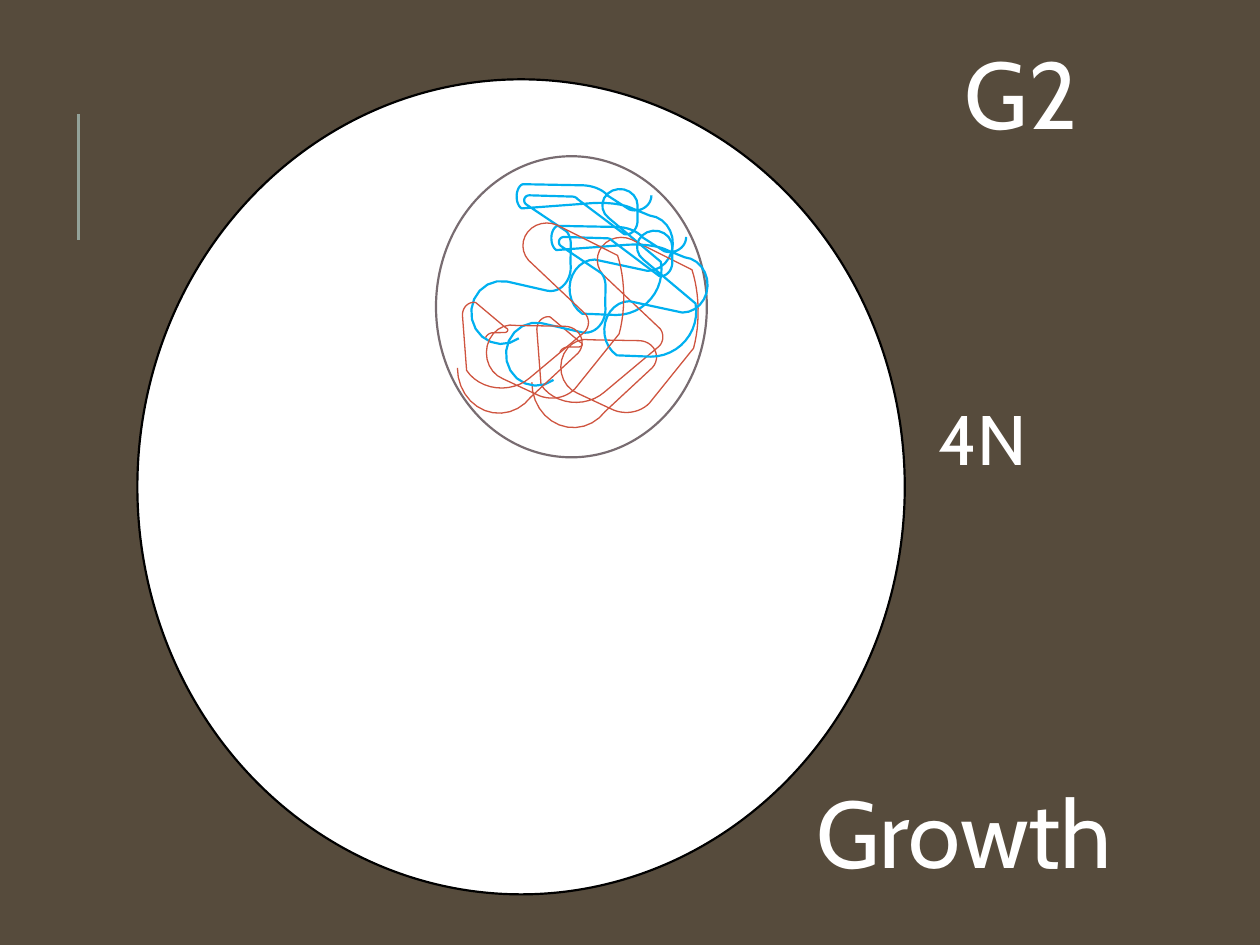
from collections import namedtuple
from math import cos, radians, sin

from lxml.etree import SubElement
from pptx import Presentation
from pptx.dml.color import RGBColor
from pptx.enum.shapes import MSO_CONNECTOR, MSO_SHAPE
from pptx.enum.text import MSO_AUTO_SIZE
from pptx.oxml.ns import qn
from pptx.util import Cm, Pt

BROWN = RGBColor(0x56, 0x4B, 0x3C)
SAGE = RGBColor(0x93, 0xA2, 0x99)
WHITE = RGBColor(0xFF, 0xFF, 0xFF)
BLACK = RGBColor(0x00, 0x00, 0x00)
MAUVE = RGBColor(0x78, 0x6C, 0x71)
BLUE = RGBColor(0x00, 0xB0, 0xF0)
RED = RGBColor(0xCF, 0x54, 0x3F)

STRAND_UNIT = Cm(2.54) / 100
ARC_STEPS = 12

Arc = namedtuple("Arc", "center_x center_y radius_x radius_y start end")

BLUE_BENDS = {
    "lower left lobe": Arc(52, 124, 24, 25, 55, 280),
    "dip": Arc(91, 88, 16, 19, 100, -10),
    "shoulder": Arc(100, 70, 7, 12, 0, -60),
    "inner cap": Arc(74, 35, 4, 4, 120, 270),
    "inner corner": Arc(108, 36, 5, 4, -90, -30),
    "ring entry": Arc(151, 51, 9, 11, 100, 0),
    "ring": Arc(146, 39, 14, 13, 0, -230),
    "right belly": Arc(143, 90, 36, 36, -10, 90),
    "middle lobe": Arc(126, 105, 20, 23, 120, 270),
    "right lobe": Arc(168, 69, 20, 22, 90, -85),
    "crest": Arc(130, 46, 30, 9, -30, -110),
    "outer cap": Arc(70, 32, 6, 10, 110, 260),
    "upper slope": Arc(115, 40, 25, 17, -85, -30),
    "end hook": Arc(158, 31, 13, 12, 110, 0),
}
RED_BENDS = {
    "bottom bowl": Arc(50, 168, 33, 36, 180, 40),
    "inner turn": Arc(102, 148, 14, 13, 40, -90),
    "left lobe": Arc(60, 156, 20, 22, -80, -250),
    "inner bowl": Arc(92, 171, 24, 21, 120, 40),
    "right side": Arc(122, 112, 27, 58, 30, -35),
    "top lobe": Arc(88, 71, 19, 18, -65, -220),
    "right corner": Arc(112, 132, 9, 10, -40, 50),
    "shallow bowl": Arc(52, 156, 32, 28, 45, 150),
    "left cap": Arc(30, 126, 9, 10, 180, 280),
    "tip": Arc(54, 138, 3, 2, -60, 90),
    "end hook": Arc(46, 146, 7, 6, 260, 200),
}


def arc_points(arc):
    for step in range(ARC_STEPS + 1):
        angle = radians(arc.start + (arc.end - arc.start) * step / ARC_STEPS)
        yield (STRAND_UNIT * (arc.center_x + arc.radius_x * cos(angle)),
               STRAND_UNIT * (arc.center_y + arc.radius_y * sin(angle)))


def add_strand(page, left, top, bends, color, weight):
    points = [point for arc in bends.values() for point in arc_points(arc)]
    builder = page.shapes.build_freeform(*points[0])
    builder.add_line_segments(points[1:], close=False)
    strand = builder.convert_to_shape(left, top)
    strand.shadow.inherit = False
    strand.fill.background()
    strand.line.color.rgb = color
    strand.line.width = Pt(weight)


def add_membrane(page, left, top, width, height, color):
    membrane = page.shapes.add_shape(MSO_SHAPE.OVAL, left, top, width, height)
    membrane.shadow.inherit = False
    membrane.fill.solid()
    membrane.fill.fore_color.rgb = WHITE
    membrane.line.color.rgb = color
    membrane.line.width = Pt(1.25)


def add_nucleus(page, left, top, width, height):
    add_membrane(page, left, top, width, height, MAUVE)
    add_strand(page, left, top, BLUE_BENDS, BLUE, 1.25)
    add_strand(page, left + Cm(1.5), top + Cm(0.29), RED_BENDS, RED, 0.75)
    add_strand(page, left + Cm(0.7), top + Cm(0.84), BLUE_BENDS, BLUE, 1.25)
    add_strand(page, left, top, RED_BENDS, RED, 0.75)


def add_cell(page, left, top, width, height):
    add_membrane(page, left, top, width, height, BLACK)
    add_nucleus(page, left + Cm(6.02), top + Cm(1.55), Cm(5.46), Cm(6.07))


def add_accent_line(page, left, top, height):
    accent = page.shapes.add_connector(
        MSO_CONNECTOR.STRAIGHT, left, top + height, left, top)
    accent.line.color.rgb = SAGE
    accent.line.width = Pt(1.5)
    SubElement(accent._element.spPr, qn("a:effectLst"))


def add_label(page, left, top, width, height, text, size):
    box = page.shapes.add_textbox(left, top, width, height)
    frame = box.text_frame
    frame.word_wrap = True
    frame.auto_size = MSO_AUTO_SIZE.SHAPE_TO_FIT_TEXT
    frame.text = text
    font = frame.paragraphs[0].runs[0].font
    font.name = "Cabin"
    font.size = Pt(size)
    font.color.rgb = WHITE


def main():
    deck = Presentation()
    deck.slide_width, deck.slide_height = Cm(25.4), Cm(19.05)
    page = deck.slides.add_slide(deck.slide_layouts[6])
    page.background.fill.solid()
    page.background.fill.fore_color.rgb = BROWN
    add_accent_line(page, Cm(1.58), Cm(2.29), Cm(2.54))
    add_cell(page, Cm(2.77), Cm(1.6), Cm(15.47), Cm(16.43))
    add_label(page, Cm(19.2), Cm(0.58), Cm(4.62), Cm(2.57), "G2", 54)
    add_label(page, Cm(16.21), Cm(15.47), Cm(8.92), Cm(2.57), "Growth", 54)
    add_label(page, Cm(18.67), Cm(7.85), Cm(7.37), Cm(1.96), "4N", 40)
    deck.save("out.pptx")


if __name__ == "__main__":
    main()
